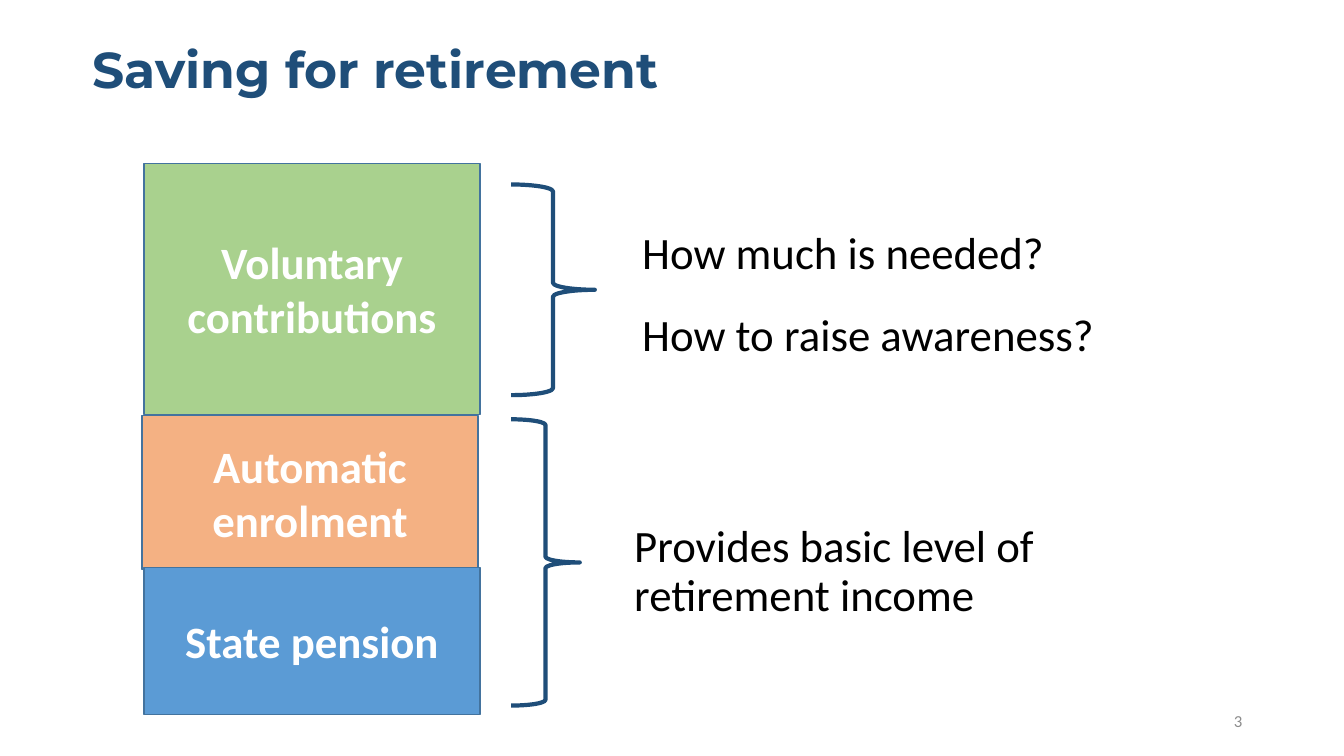
import pptx
import pptx.util
import pptx.dml.color
import pptx.enum.shapes
import pptx.enum.text
import pptx.oxml.ns
import lxml.etree

Inches = pptx.util.Inches
Pt = pptx.util.Pt
RGBColor = pptx.dml.color.RGBColor
ALIGN = pptx.enum.text.PP_ALIGN
ANCHOR = pptx.enum.text.MSO_ANCHOR
SHAPE = pptx.enum.shapes.MSO_SHAPE

NAVY = RGBColor(0x1F, 0x4E, 0x79)
EDGE = RGBColor(0x43, 0x73, 0x9E)
GREEN = RGBColor(0xA9, 0xD1, 0x8E)
ORANGE = RGBColor(0xF4, 0xB1, 0x83)
BLUE = RGBColor(0x5B, 0x9B, 0xD5)
GREY = RGBColor(0x8C, 0x8C, 0x8C)
WHITE = RGBColor(0xFF, 0xFF, 0xFF)
BLACK = RGBColor(0, 0, 0)


def place(shape, left, top, width, height):
    shape.left, shape.top = Inches(left), Inches(top)
    shape.width, shape.height = Inches(width), Inches(height)


def style(par, size, color, bold=False, name="Calibri", align=ALIGN.LEFT):
    par.alignment = align
    par.font.size = Pt(size)
    par.font.name = name
    par.font.bold = bold
    par.font.color.rgb = color


def write(shape, lines, anchor=ANCHOR.TOP):
    frame = shape.text_frame
    frame.word_wrap = True
    frame.auto_size = pptx.enum.text.MSO_AUTO_SIZE.NONE
    frame.vertical_anchor = anchor
    frame.text = "\n".join(lines)
    return frame.paragraphs


def add_title(slide, text):
    title = slide.shapes.title
    place(title, 0.82, 0.4, 11.6, 1.2)
    par = write(title, [text])[0]
    par.line_spacing = 0.9
    style(par, 36, NAVY, True, "Montserrat")


def add_block(slide, text, fill, *box):
    block = slide.shapes.add_shape(SHAPE.RECTANGLE, *map(Inches, box))
    block.shadow.inherit = False
    block.fill.solid()
    block.fill.fore_color.rgb = fill
    block.line.color.rgb = EDGE
    block.line.width = Pt(1)
    par = write(block, [text], ANCHOR.MIDDLE)[0]
    style(par, 32, WHITE, True, align=ALIGN.CENTER)


def add_brace(slide, *box):
    brace = slide.shapes.add_shape(SHAPE.RIGHT_BRACE, *map(Inches, box))
    brace.shadow.inherit = False
    brace.fill.background()
    brace.line.color.rgb = NAVY
    brace.line.width = Pt(3)


def fill_notes(shape, lines):
    for i, par in enumerate(write(shape, lines)):
        props = par._p.get_or_add_pPr()
        props.set("marL", "0")
        props.set("indent", "0")
        par.line_spacing = 0.9
        par.space_before = Pt(6 if i else 0)
        par.space_after = Pt(18)
        lxml.etree.SubElement(props, pptx.oxml.ns.qn("a:buNone"))
        style(par, 32, BLACK)


def add_box(slide, *box):
    return slide.shapes.add_textbox(*map(Inches, box))


def main():
    """Build the retirement saving slide."""
    deck = pptx.Presentation()
    deck.slide_width, deck.slide_height = Inches(13.33), Inches(7.5)
    slide = deck.slides.add_slide(deck.slide_layouts[1])

    add_title(slide, "Saving for retirement")
    add_block(slide, "Automatic enrolment", ORANGE, 1.41, 4.12, 3.33, 1.53)
    add_block(slide, "State pension", BLUE, 1.43, 5.63, 3.33, 1.46)
    add_block(slide, "Voluntary contributions", GREEN, 1.43, 1.62, 3.33, 2.49)
    add_brace(slide, 5.07, 4.16, 0.68, 2.84)
    add_brace(slide, 5.07, 1.83, 0.83, 2.09)

    body = slide.placeholders[1]
    place(body, 6.19, 5.15, 4.33, 1.37)
    fill_notes(body, ["Provides basic level of retirement income"])
    asks = add_box(slide, 6.27, 2.24, 5.28, 1.38)
    fill_notes(asks, ["How much is needed?", "How to raise awareness?"])

    number = add_box(slide, 9.42, 6.95, 3, 0.4)
    par = write(number, ["3"], ANCHOR.MIDDLE)[0]
    style(par, 12, GREY, align=ALIGN.RIGHT)
    deck.save("out.pptx")


if __name__ == "__main__":
    main()
